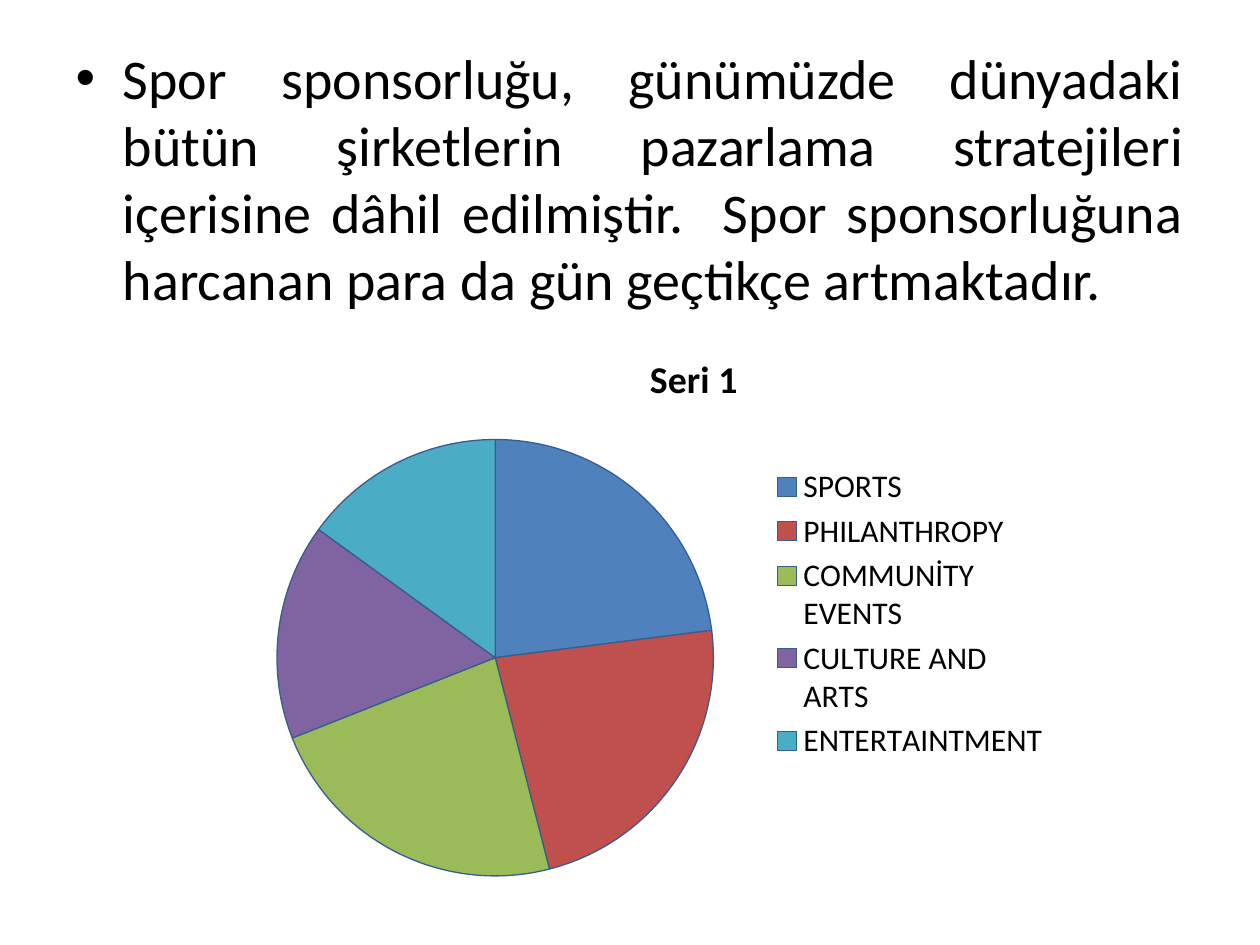
"""Builds a slide on sport sponsorship with a bullet and a pie chart."""
from lxml import etree
from pptx import Presentation
from pptx.chart.data import CategoryChartData
from pptx.dml.color import RGBColor
from pptx.enum import chart as ch, text
from pptx.oxml.ns import qn
from pptx.util import Pt

BODY = ("Spor sponsorluğu, günümüzde dünyadaki bütün şirketlerin pazarlama "
        "stratejileri içerisine dâhil edilmiştir.  Spor sponsorluğuna "
        "harcanan para da gün geçtikçe artmaktadır.")
SERIES = "Seri 1"
SHARES = [
    ("SPORTS", 23, "4F81BD"),
    ("PHILANTHROPY", 23, "C0504D"),
    ("COMMUNİTY EVENTS", 23, "9BBB59"),
    ("CULTURE AND ARTS", 16, "8064A2"),
    ("ENTERTAINTMENT", 15, "4BACC6"),
]
THEME = {"font": "Calibri", "ink": "000000", "edge": "385D8A",
         "body": 32, "title": 21.6, "legend": 18}
BODY_BOX = (36, 21, 648, 461.5)
CHART_BOX = (127.5, 191, 480, 319.5)
TITLE_AT = {"x": 0.5, "y": 0.02}


def style(font, size, bold=False):
    font.name, font.size, font.bold = THEME["font"], Pt(size), bold
    font.color.rgb = RGBColor.from_string(THEME["ink"])


def put_text(tf, words, size, bold=False, align=None):
    p = tf.paragraphs[0]
    p.alignment = align
    r = p.add_run()
    r.text = words
    style(r.font, size, bold)


def place_title(title):
    el = title._element
    for old in el.findall(qn("c:layout")):
        el.remove(old)
    layout = etree.Element(qn("c:layout"))
    el.find(qn("c:tx")).addnext(layout)
    manual = etree.SubElement(layout, qn("c:manualLayout"))
    for axis in TITLE_AT:
        etree.SubElement(manual, qn(f"c:{axis}Mode")).set("val", "edge")
    for axis, value in TITLE_AT.items():
        etree.SubElement(manual, qn(f"c:{axis}")).set("val", str(value))


def add_body(s):
    sp = s.placeholders[1]
    sp.left, sp.top, sp.width, sp.height = map(Pt, BODY_BOX)
    tf = sp.text_frame
    tf.auto_size = text.MSO_AUTO_SIZE.NONE
    put_text(tf, BODY, THEME["body"], align=text.PP_ALIGN.JUSTIFY)


def add_pie(s):
    data = CategoryChartData()
    data.categories = [name for name, _, _ in SHARES]
    data.add_series(SERIES, [value for _, value, _ in SHARES])
    chart = s.shapes.add_chart(ch.XL_CHART_TYPE.PIE, *map(Pt, CHART_BOX), data).chart
    style(chart.font, THEME["legend"])
    chart.has_title = True
    put_text(chart.chart_title.text_frame, SERIES, THEME["title"], bold=True)
    place_title(chart.chart_title)
    chart.has_legend = True
    chart.legend.position = ch.XL_LEGEND_POSITION.RIGHT
    chart.legend.include_in_layout = False
    plot = chart.plots[0]
    plot.vary_by_categories = True
    for i, (_, _, colour) in enumerate(SHARES):
        fmt = plot.series[0].points[i].format
        fmt.fill.solid()
        fmt.fill.fore_color.rgb = RGBColor.from_string(colour)
        fmt.line.color.rgb = RGBColor.from_string(THEME["edge"])
        fmt.line.width = Pt(0.75)


def main():
    prs = Presentation()
    prs.slide_width, prs.slide_height = Pt(720), Pt(540)
    s = prs.slides.add_slide(prs.slide_layouts[1])
    title = s.shapes.title._element
    title.getparent().remove(title)
    add_body(s)
    add_pie(s)
    prs.save("out.pptx")


if __name__ == "__main__":
    main()
